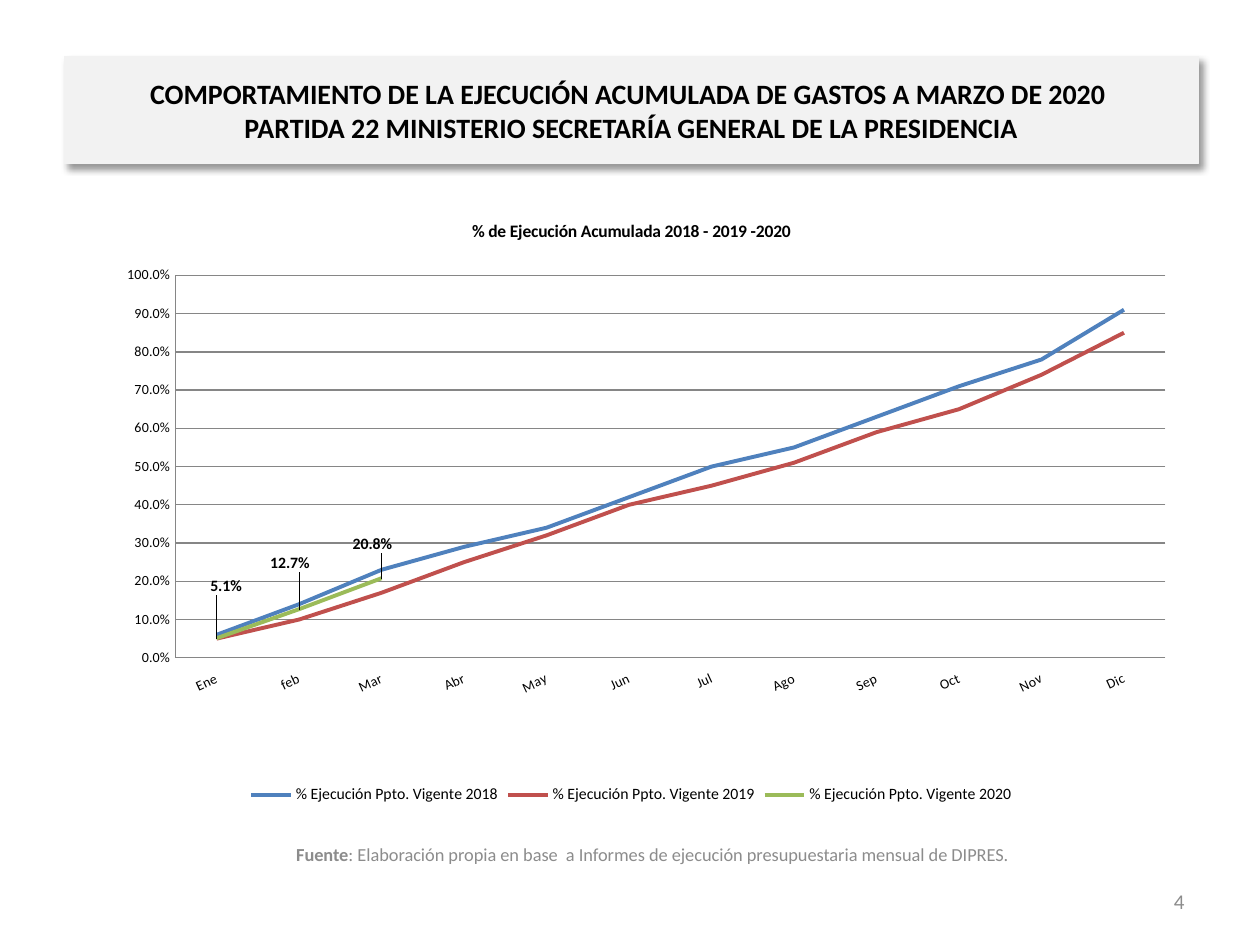
from lxml import etree
from pptx import Presentation
from pptx.chart.data import CategoryChartData
from pptx.dml.color import RGBColor
from pptx.enum.chart import (XL_CHART_TYPE, XL_LABEL_POSITION, XL_LEGEND_POSITION,
                             XL_MARKER_STYLE, XL_TICK_LABEL_POSITION, XL_TICK_MARK)
from pptx.enum.text import MSO_ANCHOR, PP_ALIGN
from pptx.oxml import parse_xml
from pptx.oxml.ns import nsdecls, qn
from pptx.util import Inches, Pt

COLORS = {"black": "000000", "gray": "8C8C8C", "panel": "F2F2F2", "grid": "868686",
          "2018": "4F81BD", "2019": "C0504D", "2020": "9BBB59"}
FONT = "Calibri"


def style(font, size, color="black", bold=False):
    font.name, font.size, font.bold = FONT, Pt(size), bold
    font.color.rgb = RGBColor.from_string(COLORS[color])


def manual_layout(**values):
    layout = etree.Element(qn("c:layout"))
    manual = etree.SubElement(layout, qn("c:manualLayout"))
    for tag, value in values.items():
        etree.SubElement(manual, qn(f"c:{tag}")).set("val", str(value))
    return layout


prs = Presentation()
prs.slide_width, prs.slide_height = Inches(10), Inches(7.5)
s = prs.slides.add_slide(prs.slide_layouts[5])

# Title panel
sp = s.shapes.title
sp.left, sp.top, sp.width, sp.height = Inches(0.51), Inches(0.45), Inches(9), Inches(0.85)
sp.fill.solid()
sp.fill.fore_color.rgb = RGBColor.from_string(COLORS["panel"])
sp.line.color.rgb = RGBColor.from_string(COLORS["panel"])
sp.line.width = Pt(0.75)
sp._element.spPr.append(parse_xml(
    f'<a:effectLst {nsdecls("a")}><a:outerShdw blurRad="50800" dist="38100" dir="2700000" '
    'algn="tl" rotWithShape="0"><a:srgbClr val="000000"><a:alpha val="40000"/></a:srgbClr>'
    '</a:outerShdw></a:effectLst>'))
tf = sp.text_frame
tf.vertical_anchor = MSO_ANCHOR.MIDDLE
p = tf.paragraphs[0]
p.alignment = PP_ALIGN.CENTER
for i, line in enumerate(["COMPORTAMIENTO DE LA EJECUCIÓN ACUMULADA DE GASTOS A MARZO DE 2020 ",
                          "PARTIDA 22 MINISTERIO SECRETARÍA GENERAL DE LA PRESIDENCIA"]):
    if i:
        p.add_line_break()
    r = p.add_run()
    r.text = line
    style(r.font, 16, bold=True)

# Chart data
data = CategoryChartData(number_format="0.0%")
data.categories = ["Ene", "feb", "Mar", "Abr", "May", "Jun",
                   "Jul", "Ago", "Sep", "Oct", "Nov", "Dic"]
execution = {
    "2018": [0.06, 0.14, 0.23, 0.29, 0.34, 0.42, 0.5, 0.55, 0.63, 0.71, 0.78, 0.91],
    "2019": [0.05, 0.1, 0.17, 0.25, 0.32, 0.4, 0.45, 0.51, 0.59, 0.65, 0.74, 0.85],
    "2020": [0.051, 0.127, 0.208] + [None] * 9,
}
for year, values in execution.items():
    data.add_series(f"% Ejecución Ppto. Vigente {year}", values)
chart = s.shapes.add_chart(XL_CHART_TYPE.LINE, Inches(0.51), Inches(1.57),
                           Inches(9), Inches(4.85), data).chart
style(chart.font, 10)

# Chart title, legend and plot area
p = chart.chart_title.text_frame.paragraphs[0]
r = p.add_run()
r.text = "% de Ejecución Acumulada 2018 - 2019 -2020"
style(r.font, 10, bold=True)
chart.has_legend = True
chart.legend.position = XL_LEGEND_POSITION.BOTTOM
chart.legend.include_in_layout = False
style(chart.legend.font, 9)
plot_area = chart._chartSpace.chart.plotArea
for old in plot_area.findall(qn("c:layout")):
    plot_area.remove(old)
plot_area.insert(0, manual_layout(layoutTarget="inner", xMode="edge", yMode="edge",
                                  x=0.098, y=0.127, w=0.873, h=0.626))

# Axes
for axis in (chart.category_axis, chart.value_axis):
    axis.major_tick_mark = axis.minor_tick_mark = XL_TICK_MARK.NONE
    axis.format.line.color.rgb = RGBColor.from_string(COLORS["grid"])
    style(axis.tick_labels.font, 8)
cat, val = chart.category_axis, chart.value_axis
cat.tick_label_position = XL_TICK_LABEL_POSITION.LOW
cat._element.find(qn("c:txPr")).find(qn("a:bodyPr")).set("rot", "-1500000")
val.minimum_scale, val.maximum_scale, val.major_unit = 0, 1, 0.1
val.tick_labels.number_format = "0.0%"
val.tick_labels.number_format_is_linked = False
val.has_major_gridlines = True
val.major_gridlines.format.line.color.rgb = RGBColor.from_string(COLORS["grid"])

# Series lines
for year, ser in zip(execution, chart.plots[0].series):
    ser.smooth = False
    ser.marker.style = XL_MARKER_STYLE.NONE
    ser.format.line.width = Pt(2.25)
    ser.format.line.color.rgb = RGBColor.from_string(COLORS[year])

# Labels of the 2020 series, lifted above the lines
ser = chart.plots[0].series[2]
labels = ser.data_labels
labels.show_value = True
labels.number_format = "0.0%"
labels.number_format_is_linked = False
style(labels.font, 9, bold=True)
for i, (dx, dy) in enumerate([(-0.01, -0.085), (-0.03, -0.075), (-0.03, -0.055)]):
    label = ser.points[i].data_label
    label.position = XL_LABEL_POSITION.RIGHT
    style(label.font, 9, bold=True)
for d, (dx, dy) in zip(labels._element.findall(qn("c:dLbl")),
                       [(-0.01, -0.085), (-0.03, -0.075), (-0.03, -0.055)]):
    d.insert(1, manual_layout(x=dx, y=dy))

# Source note and page number
notes = [
    (1.06, 6.58, 8.24, PP_ALIGN.CENTER, 10.5,
     [("Fuente", True),
      (": Elaboración propia en base  a Informes de ejecución presupuestaria mensual de DIPRES.",
       False)]),
    (7.17, 6.95, 2.33, PP_ALIGN.RIGHT, 12, [("4", False)]),
]
for x, y, w, align, size, runs in notes:
    tf = s.shapes.add_textbox(Inches(x), Inches(y), Inches(w), Inches(0.4)).text_frame
    tf.word_wrap = True
    tf.vertical_anchor = MSO_ANCHOR.MIDDLE
    p = tf.paragraphs[0]
    p.alignment = align
    for text, bold in runs:
        r = p.add_run()
        r.text = text
        style(r.font, size, "gray", bold)

prs.save("out.pptx")
